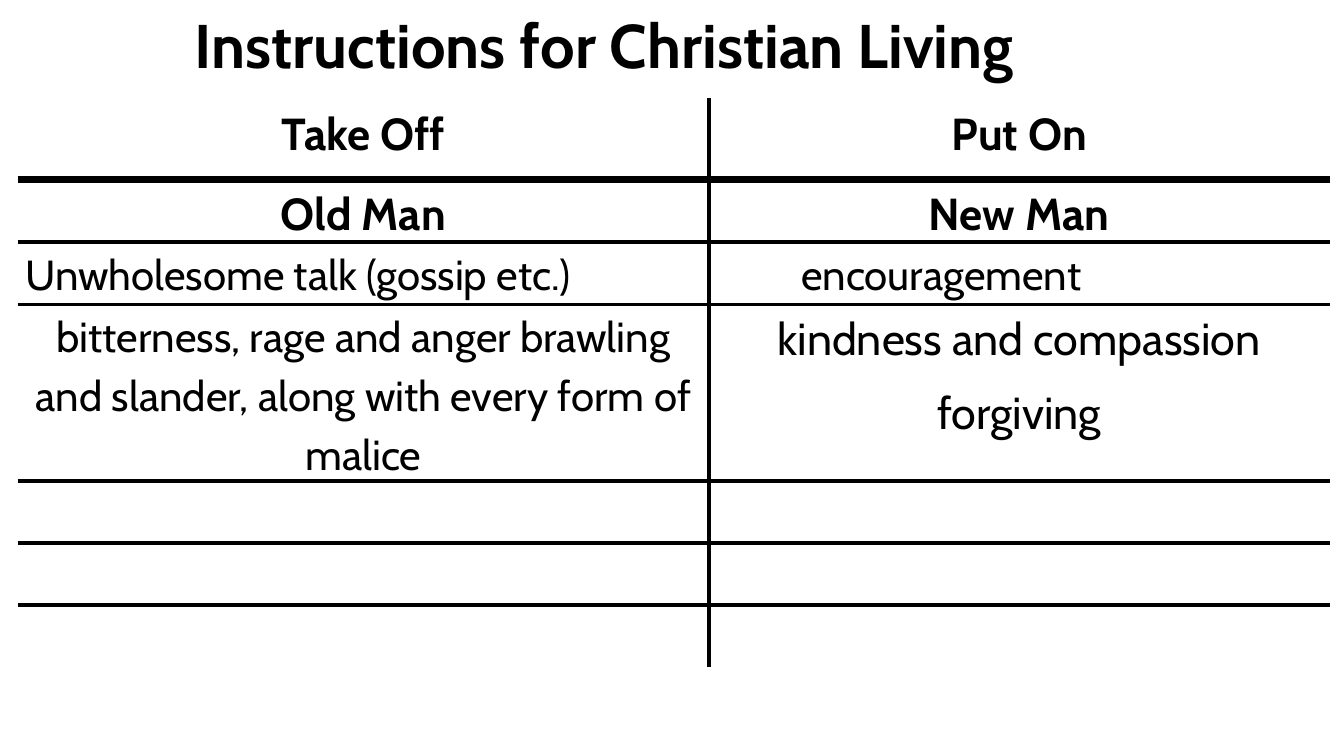
"""Build the Instructions for Christian Living slide with its two-column table."""
import pptx
import pptx.util
import pptx.dml.color
import pptx.enum.text
import pptx.oxml.ns
from lxml import etree

Cm, Pt = pptx.util.Cm, pptx.util.Pt
ALIGN = pptx.enum.text.PP_ALIGN
COLORS = {"ink": "000000", "paper": "FFFFFF"}
FONT = "Cabin"

TITLE = "Instructions for Christian Living"
HEADING = {"size": 32, "bold": True}
ROWS = [
    [(["Take Off"], HEADING), (["Put On"], HEADING)],
    [(["Old Man"], HEADING), (["New Man"], HEADING)],
    [(["Unwholesome talk (gossip etc.)"], {"size": 30, "align": ALIGN.LEFT}),
     (["encouragement"], {"size": 30, "align": ALIGN.LEFT, "indent": 2.33})],
    [(["bitterness, rage and anger brawling and slander, "
       "along with every form of malice"], {"size": 30}),
     (["kindness and compassion", "forgiving"], {"size": 32})],
    [([], {}), ([], {})],
    [([], {}), ([], {})],
    [([], {}), ([], {})],
]
COL_WIDTHS = [17.4, 15.65]
ROW_HEIGHT = 1.57
SPECIAL_HEIGHTS = {0: 2.03, 3: 4.27}
THIN, RULE, HEADER_RULE = 1, 3, 6


def write(tf, lines, size, bold=False, align=ALIGN.CENTER, spacing=1.15, after=8):
    """Fill a text frame with one formatted paragraph per line."""
    for i, line in enumerate(lines):
        p = tf.paragraphs[0] if i == 0 else tf.add_paragraph()
        p.alignment, p.line_spacing, p.space_after = align, spacing, Pt(after)
        r = p.add_run()
        r.text = line
        r.font.name, r.font.size, r.font.bold = FONT, Pt(size), bold
        r.font.color.rgb = pptx.dml.color.RGBColor.from_string(COLORS["ink"])


def add_border(cell, side, width, color):
    """Draw one side of a table cell."""
    qn = pptx.oxml.ns.qn
    ln = etree.SubElement(cell._tc.get_or_add_tcPr(), qn(f"a:ln{side}"), w=str(Pt(width)))
    fill = etree.SubElement(ln, qn("a:solidFill"))
    etree.SubElement(fill, qn("a:srgbClr"), val=COLORS[color])


def rule_above(row):
    """Return width and colour of the horizontal line above a row."""
    if row in (0, len(ROWS)):
        return THIN, "paper"
    return (HEADER_RULE if row == 1 else RULE), "ink"


def rule_before(col):
    """Return width and colour of the vertical line left of a column."""
    return (THIN, "paper") if col in (0, len(COL_WIDTHS)) else (RULE, "ink")


def add_title(s):
    """Place the slide title."""
    sp = s.shapes.title
    sp.left, sp.top, sp.width, sp.height = Cm(4.65), Cm(0), Cm(29.2), Cm(2.46)
    tf = sp.text_frame
    tf.auto_size = pptx.enum.text.MSO_AUTO_SIZE.NONE
    tf.vertical_anchor = pptx.enum.text.MSO_ANCHOR.MIDDLE
    write(tf, [TITLE], size=44, bold=True, align=ALIGN.LEFT, spacing=0.9, after=0)


def add_comparison(s):
    """Place the table of what to take off and what to put on."""
    heights = [SPECIAL_HEIGHTS.get(i, ROW_HEIGHT) for i in range(len(ROWS))]
    table = s.shapes.add_table(len(ROWS), len(COL_WIDTHS), Cm(0.46), Cm(2.49),
                               Cm(sum(COL_WIDTHS)), Cm(sum(heights))).table
    table.first_row = table.horz_banding = False
    for col, width in zip(table.columns, COL_WIDTHS):
        col.width = Cm(width)
    for i, (row, height) in enumerate(zip(ROWS, heights)):
        table.rows[i].height = Cm(height)
        for j, (lines, style) in enumerate(row):
            cell = table.cell(i, j)
            style = dict(style)
            cell.margin_left = Cm(style.pop("indent", 0.18))
            cell.margin_right = Cm(0.18)
            cell.margin_top = cell.margin_bottom = 0
            for side, line in (("L", rule_before(j)), ("R", rule_before(j + 1)),
                               ("T", rule_above(i)), ("B", rule_above(i + 1))):
                add_border(cell, side, *line)
            cell.fill.background()
            write(cell.text_frame, lines, **style) if lines else None


def main():
    """Create and save the presentation."""
    prs = pptx.Presentation()
    prs.slide_width, prs.slide_height = Cm(33.87), Cm(19.05)
    s = prs.slides.add_slide(prs.slide_layouts[5])
    add_comparison(s)
    add_title(s)
    prs.save("out.pptx")


if __name__ == "__main__":
    main()
